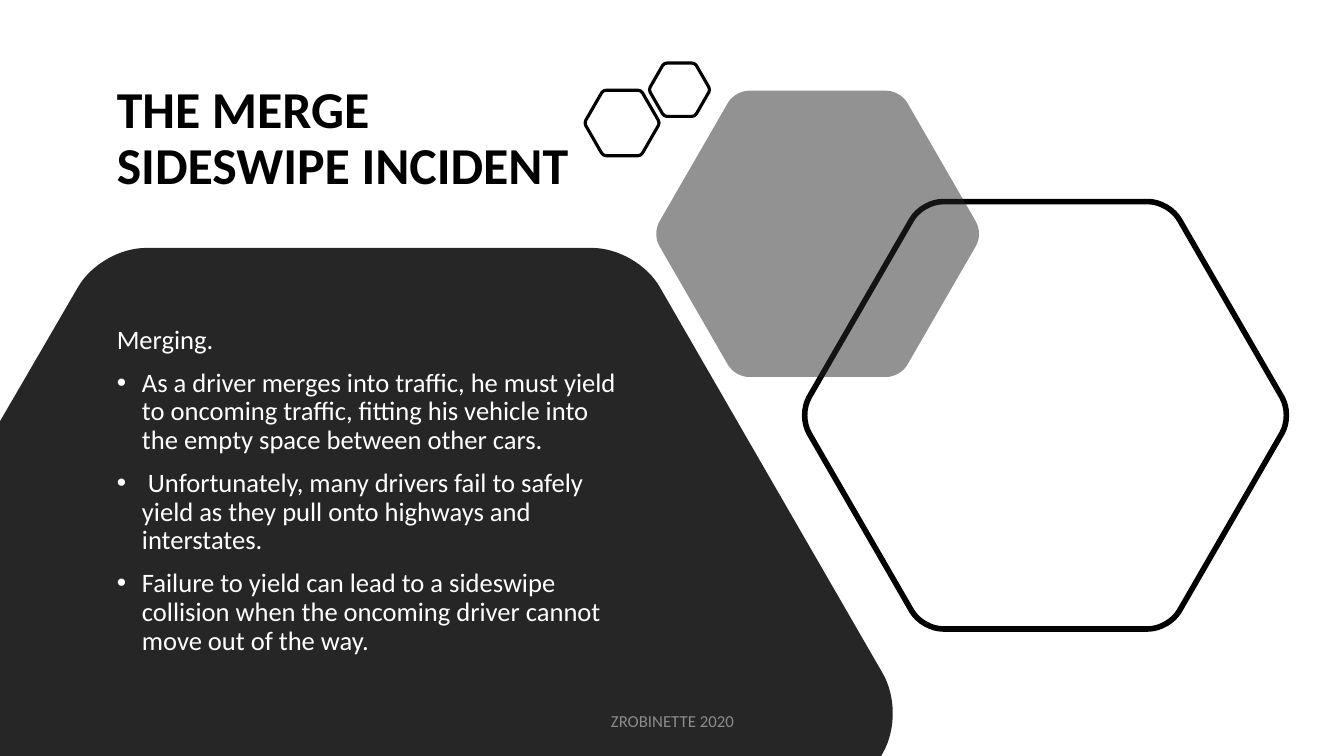
from math import cos, dist, pi, sin, sqrt
from lxml.etree import SubElement
from pptx import Presentation
from pptx.dml.color import RGBColor
from pptx.enum.text import MSO_ANCHOR, PP_ALIGN
from pptx.oxml.ns import qn
from pptx.util import Inches, Pt

BLACK = RGBColor(0, 0, 0)
WHITE = RGBColor(255, 255, 255)
DARK = RGBColor(0x26, 0x26, 0x26)
GRAY = RGBColor(0x8C, 0x8C, 0x8C)
WIDTH, HEIGHT = 13.33, 7.5
BEND = 0.58
POINTS = [
    "As a driver merges into traffic, he must yield to oncoming traffic, "
    "fitting his vehicle into the empty space between other cars.",
    " Unfortunately, many drivers fail to safely yield as they pull onto "
    "highways and interstates.",
    "Failure to yield can lead to a sideswipe collision when the oncoming "
    "driver cannot move out of the way.",
]


def blend(start, end, part):
    return tuple(a + (b - a) * part for a, b in zip(start, end))


def hex_tips(mid_x, mid_y, height, cut):
    side = height / sqrt(3)
    return [(mid_x + side * cos(i * pi / 3), mid_y + side * sin(i * pi / 3), cut)
            for i in range(6)]


def round_tip(last, tip, after):
    spot, cut = tip[:2], tip[2]
    enter = blend(spot, last[:2], cut / dist(spot, last[:2]))
    leave = blend(spot, after[:2], cut / dist(spot, after[:2]))
    return [enter, blend(enter, spot, BEND), blend(leave, spot, BEND), leave]


def add_outline(slide, tips, fill=None, alpha=None, line=None):
    points, bends = [], []
    for i, tip in enumerate(tips):
        if tip[2]:
            bends.append(len(points))
            points += round_tip(tips[i - 1], tip, tips[(i + 1) % len(tips)])
        else:
            points.append(tip[:2])
    spots = [(Inches(x), Inches(y)) for x, y in points]
    builder = slide.shapes.build_freeform(*spots[0], scale=1.0)
    builder.add_line_segments(spots[1:], close=True)
    shape = builder.convert_to_shape()
    lines = list(shape._element.iter(qn("a:lnTo")))
    for bend in bends:
        curve, *others = lines[bend:bend + 3]
        for other in others:
            curve.append(other[0])
            other.getparent().remove(other)
        curve.tag = qn("a:cubicBezTo")

    shape.shadow.inherit = False
    if fill is None:
        shape.fill.background()
    else:
        shape.fill.solid()
        shape.fill.fore_color.rgb = fill
    if alpha is not None:
        color = shape.fill._xPr.find(".//" + qn("a:srgbClr"))
        SubElement(color, qn("a:alpha")).set("val", str(alpha * 1000))
    if line is None:
        shape.line.fill.background()
    else:
        shape.line.color.rgb = BLACK
        shape.line.width = Pt(line)


def add_text(slide, box, lines, size, color, bold=False, anchor=MSO_ANCHOR.MIDDLE):
    frame = slide.shapes.add_textbox(*map(Inches, box)).text_frame
    frame.word_wrap = True
    frame.vertical_anchor = anchor
    frame.text = "\n".join(lines)
    for para in frame.paragraphs:
        font = para.runs[0].font
        font.name = "Calibri"
        font.size = Pt(size)
        font.bold = bold
        font.color.rgb = color
    return frame.paragraphs


def add_bullet(para):
    props = para._p.get_or_add_pPr()
    props.set("marL", str(Inches(0.25)))
    props.set("indent", str(-Inches(0.25)))
    SubElement(props, qn("a:buFont")).set("typeface", "Arial")
    SubElement(props, qn("a:buChar")).set("char", "•")


def main():
    prs = Presentation()
    prs.slide_width = Inches(WIDTH)
    prs.slide_height = Inches(HEIGHT)
    slide = prs.slides.add_slide(prs.slide_layouts[6])

    title = add_text(slide, (1.06, 0.49, 4.68, 1.8),
                     ["THE MERGE SIDESWIPE INCIDENT"], 37, BLACK, bold=True)
    title[0].line_spacing = 0.9

    panel = [(0, HEIGHT, 0), (0, 4.18, 0), (1, 2.46, 0.45),
             (6.32, 2.46, 0.45), (8.98, 7.07, 0.45), (8.74, HEIGHT, 0)]
    add_outline(slide, panel, fill=DARK)
    add_outline(slide, hex_tips(10.37, 4.12, 4.24, 0.21), line=4)
    add_outline(slide, hex_tips(8.11, 2.32, 2.84, 0.14), fill=DARK, alpha=50)
    add_outline(slide, hex_tips(6.17, 1.22, 0.65, 0.03), line=2.25)
    add_outline(slide, hex_tips(6.74, 0.89, 0.53, 0.03), line=2.25)

    body = add_text(slide, (1.06, 3.19, 5.19, 3.38), ["Merging."] + POINTS,
                    19, WHITE, anchor=MSO_ANCHOR.TOP)
    for para in body:
        para.line_spacing = 0.9
        para.space_before = Pt(10)
    for para in body[1:]:
        add_bullet(para)

    foot = add_text(slide, (4.42, 6.95, 4.5, 0.4), ["ZROBINETTE 2020"], 12, GRAY)
    foot[0].alignment = PP_ALIGN.CENTER
    prs.save("out.pptx")


if __name__ == "__main__":
    main()
